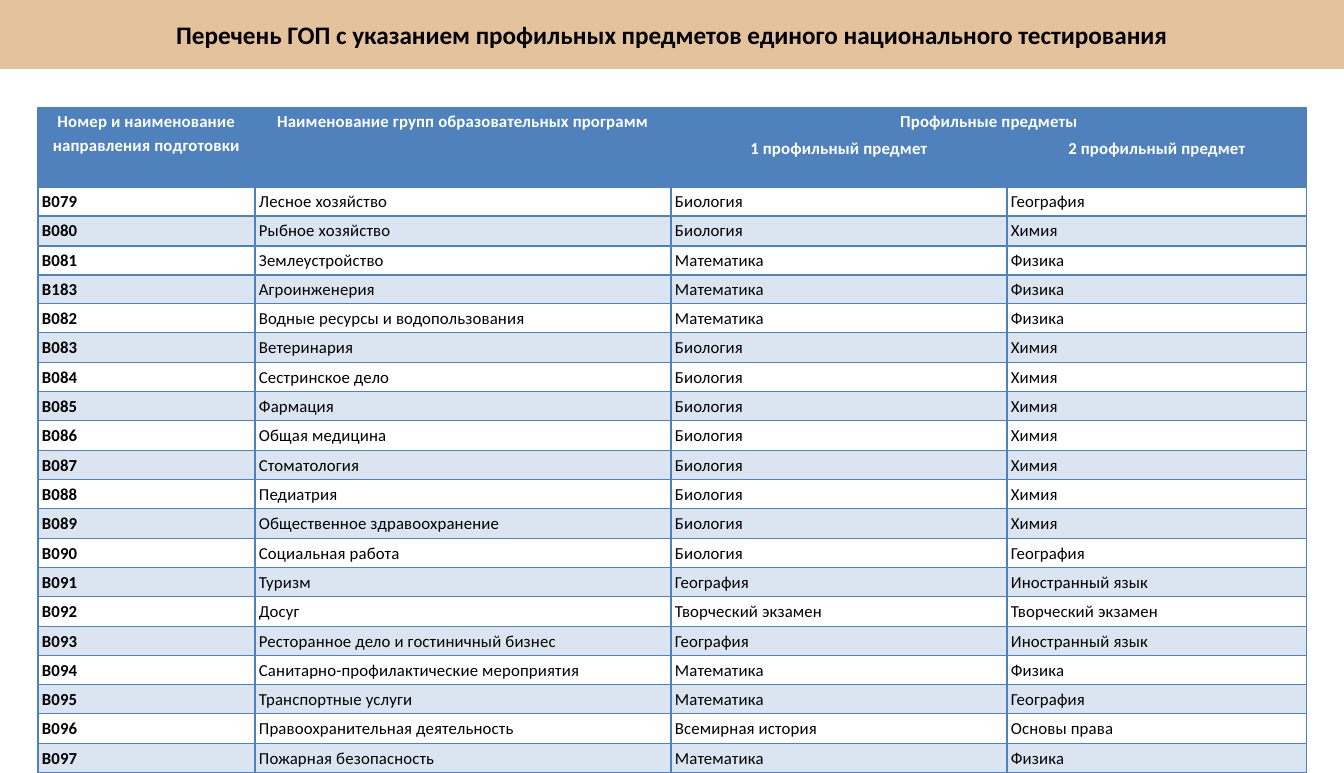
import pptx
import pptx.dml.color
import pptx.enum.shapes
import pptx.enum.text
import pptx.oxml
import pptx.oxml.ns
import pptx.util

PX = 9080  # EMU in one px
BLUE = pptx.dml.color.RGBColor(0x4F, 0x81, 0xBD)
SAND = pptx.dml.color.RGBColor(0xE4, 0xC2, 0x9C)
WHITE = pptx.dml.color.RGBColor(0xFF, 0xFF, 0xFF)
BLACK = pptx.dml.color.RGBColor(0x00, 0x00, 0x00)
FONT = "Calibri"
CENTER = pptx.enum.text.PP_ALIGN.CENTER

COLUMN_WIDTHS = [217, 416, 336, 300]
HEADER_HEIGHTS = [27, 52]
BODY_HEIGHT = 586

HEADER = [
    ["Номер и наименование направления подготовки",
     "Наименование групп образовательных программ", "Профильные предметы", ""],
    ["", "", "1 профильный предмет", "2 профильный предмет"],
]
PROGRAMS = [
    ["В079", "Лесное хозяйство", "Биология", "География"],
    ["В080", "Рыбное хозяйство", "Биология", "Химия"],
    ["В081", "Землеустройство", "Математика", "Физика"],
    ["В183", "Агроинженерия", "Математика", "Физика"],
    ["В082", "Водные ресурсы и водопользования", "Математика", "Физика"],
    ["В083", "Ветеринария", "Биология", "Химия"],
    ["В084", "Сестринское дело", "Биология", "Химия"],
    ["В085", "Фармация", "Биология", "Химия"],
    ["В086", "Общая медицина", "Биология", "Химия"],
    ["В087", "Стоматология", "Биология", "Химия"],
    ["В088", "Педиатрия", "Биология", "Химия"],
    ["В089", "Общественное здравоохранение", "Биология", "Химия"],
    ["В090", "Социальная работа", "Биология", "География"],
    ["В091", "Туризм", "География", "Иностранный язык"],
    ["В092", "Досуг", "Творческий экзамен", "Творческий экзамен"],
    ["В093", "Ресторанное дело и гостиничный бизнес", "География", "Иностранный язык"],
    ["В094", "Санитарно-профилактические мероприятия", "Математика", "Физика"],
    ["В095", "Транспортные услуги", "Математика", "География"],
    ["В096", "Правоохранительная деятельность", "Всемирная история", "Основы права"],
    ["В097", "Пожарная безопасность", "Математика", "Физика"],
]


def style_span(span, size, color, bold):
    span.font.name = FONT
    span.font.size = pptx.util.Pt(size)
    span.font.color.rgb = color
    span.font.bold = bold


def add_borders(cell):
    properties = cell._tc.get_or_add_tcPr()
    for index, side in enumerate(["lnL", "lnR", "lnT", "lnB"]):
        line = pptx.oxml.parse_xml(
            f'<a:{side} {pptx.oxml.ns.nsdecls("a")} w="12700"><a:solidFill>'
            f'<a:srgbClr val="{BLUE}"/></a:solidFill></a:{side}>')
        properties.insert(index, line)


deck = pptx.Presentation()
deck.slide_width = 1344 * PX
deck.slide_height = 773 * PX
page = deck.slides.add_slide(deck.slide_layouts[5])

# Table of programme groups
rows = HEADER + PROGRAMS
header_count = len(HEADER)
frame = page.shapes.add_table(
    len(rows), len(COLUMN_WIDTHS), 38 * PX, 108 * PX, sum(COLUMN_WIDTHS) * PX,
    (sum(HEADER_HEIGHTS) + BODY_HEIGHT) * PX)
table = frame.table
table.first_row = False
table.horz_banding = False
for column, width in zip(table.columns, COLUMN_WIDTHS):
    column.width = width * PX
edges = [round(BODY_HEIGHT * i / len(PROGRAMS)) for i in range(len(PROGRAMS) + 1)]
body_heights = [bottom - top for top, bottom in zip(edges, edges[1:])]
for row, height in zip(table.rows, HEADER_HEIGHTS + body_heights):
    row.height = height * PX

table.cell(0, 0).merge(table.cell(1, 0))
table.cell(0, 1).merge(table.cell(1, 1))
table.cell(0, 2).merge(table.cell(0, 3))

for r, texts in enumerate(rows):
    is_header = r < header_count
    for c, text in enumerate(texts):
        cell = table.cell(r, c)
        cell.margin_left = cell.margin_right = (2 if is_header else 4) * PX
        cell.margin_top = cell.margin_bottom = (1 if is_header else 2) * PX

        # Solid header, pale tint on every second programme
        if is_header or r % 2:
            cell.fill.solid()
            cell.fill.fore_color.rgb = BLUE
            if not is_header:
                tint = cell._tc.tcPr.find(".//" + pptx.oxml.ns.qn("a:srgbClr"))
                tint.append(pptx.oxml.parse_xml(
                    f'<a:alpha {pptx.oxml.ns.nsdecls("a")} val="20000"/>'))
        else:
            cell.fill.background()
        add_borders(cell)

        if text:
            para = cell.text_frame.paragraphs[0]
            para.text = text
            para.line_spacing = 1.15
            if is_header:
                para.alignment = CENTER
            span = para.runs[0]
            style_span(span, 12, WHITE if is_header else BLACK, is_header or c == 0)
            span._r.get_or_add_rPr().set("spc", "10")

# Title band
band = page.shapes.add_shape(
    pptx.enum.shapes.MSO_SHAPE.RECTANGLE, 0, -2 * PX, 1346 * PX, 71 * PX)
band.shadow.inherit = False
band.fill.solid()
band.fill.fore_color.rgb = SAND
band.line.fill.background()

# Title, brought in front of the band
title = page.shapes.title
band._element.addnext(title._element)
title.left, title.top, title.width, title.height = 0, 0, 1344 * PX, 69 * PX
box = title.text_frame
box.text = "Перечень ГОП с указанием профильных предметов единого национального тестирования"
box.word_wrap = True
box.vertical_anchor = pptx.enum.text.MSO_ANCHOR.MIDDLE
box.margin_left = box.margin_right = 12 * PX
box.margin_top = box.margin_bottom = 6 * PX
para = box.paragraphs[0]
para.alignment = CENTER
style_span(para.runs[0], 18, BLACK, True)

deck.save("out.pptx")
